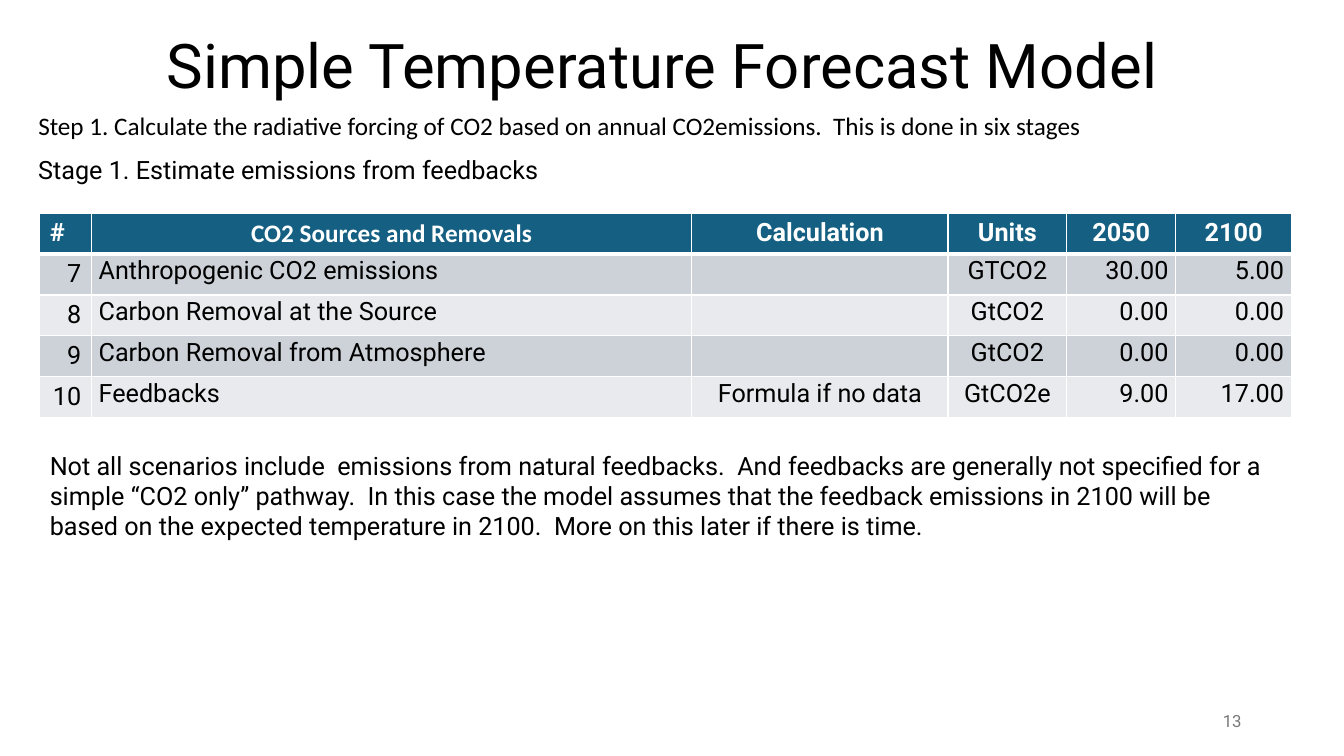
from lxml.etree import SubElement
from pptx import Presentation
from pptx.dml.color import RGBColor
from pptx.enum.text import MSO_ANCHOR, PP_ALIGN
from pptx.oxml import parse_xml
from pptx.oxml.ns import nsdecls
from pptx.util import Emu, Pt

BLACK = RGBColor(0x00, 0x00, 0x00)
WHITE = RGBColor(0xFF, 0xFF, 0xFF)
GREY = RGBColor(0x79, 0x79, 0x79)
TEAL = RGBColor(0x15, 0x60, 0x82)
BANDS = [RGBColor(0xCC, 0xD2, 0xD8), RGBColor(0xE8, 0xEA, 0xED)]
LEFT, MID, RIGHT = PP_ALIGN.LEFT, PP_ALIGN.CENTER, PP_ALIGN.RIGHT

COLUMNS = [49, 572, 244, 113, 104, 110]
ALIGNS = [RIGHT, LEFT, MID, MID, RIGHT, RIGHT]
HEADS = ["#", "CO2 Sources and Removals", "Calculation", "Units", "2050", "2100"]
ROWS = [
    ["7", "Anthropogenic CO2 emissions", "", "GTCO2", "30.00", "5.00"],
    ["8", "Carbon Removal at the Source", "", "GtCO2", "0.00", "0.00"],
    ["9", "Carbon Removal from Atmosphere", "", "GtCO2", "0.00", "0.00"],
    ["10", "Feedbacks", "Formula if no data", "GtCO2e", "9.00", "17.00"],
]
NOTE = (
    "Not all scenarios include  emissions from natural feedbacks.  And feedbacks are "
    "generally not specified for a simple “CO2 only” pathway.  In this case the model "
    "assumes that the feedback emissions in 2100 will be based on the expected "
    "temperature in 2100.  More on this later if there is time."
)


def px(count):
    """Turn whole pixels into EMU."""
    return Emu(count * 9525)


def assign(target, values):
    """Set every named attribute on the target."""
    for name, value in values.items():
        setattr(target, name, value)


class Deck:
    """Hold the text style and the current slide."""

    def __init__(self):
        """Open a wide deck with one title-only slide."""
        self.deck = Presentation()
        assign(self.deck, {"slide_width": px(1280), "slide_height": px(720)})
        self.slide = self.deck.slides.add_slide(self.deck.slide_layouts[5])
        self.style = {"name": "Roboto", "size": Pt(18), "bold": False}

    def text(self, frame, words, color=BLACK, para=None, **font):
        """Put one formatted paragraph into a text frame."""
        line = frame.paragraphs[0]
        assign(line, para or {})
        run = line.add_run()
        run.text = words
        assign(run.font, self.style | font)
        run.font.color.rgb = color

    def title(self, words, box):
        """Place and fill the title placeholder."""
        shape = self.slide.shapes.title
        assign(shape, dict(zip(("left", "top", "width", "height"), map(px, box))))
        shape.text_frame.vertical_anchor = MSO_ANCHOR.MIDDLE
        self.text(shape.text_frame, words, size=Pt(44),
                  para={"alignment": MID, "line_spacing": 0.9})

    def label(self, words, box, anchor=MSO_ANCHOR.TOP, **look):
        """Add a wrapped text box."""
        frame = self.slide.shapes.add_textbox(*map(px, box)).text_frame
        assign(frame, {"word_wrap": True, "vertical_anchor": anchor})
        self.text(frame, words, **look)

    def border(self, cell, base):
        """Draw white lines around a cell, with the given base width."""
        props = cell._tc.get_or_add_tcPr()
        for spot, side in enumerate("LRTB"):
            width = Pt(base if side == "B" else 1)
            line = parse_xml(f'<a:ln{side} {nsdecls("a")} w="{width}"/>')
            fill = SubElement(line, line.tag.replace(f"ln{side}", "solidFill"))
            SubElement(fill, line.tag.replace(f"ln{side}", "srgbClr"), val=str(WHITE))
            props.insert(spot, line)

    def cell(self, cell, words, fill, base=1, **look):
        """Fill, border and letter one table cell."""
        cell.fill.solid()
        cell.fill.fore_color.rgb = fill
        self.border(cell, base)
        if words:
            self.text(cell.text_frame, words, **look)

    def table(self, left, top, tall):
        """Add the table of sources and removals."""
        count = len(ROWS) + 1
        grid = self.slide.shapes.add_table(
            count, len(COLUMNS), px(left), px(top), px(sum(COLUMNS)), px(tall * count)
        ).table
        for column, width in zip(grid.columns, COLUMNS):
            column.width = px(width)
        for col, head in enumerate(HEADS):
            self.cell(grid.cell(0, col), head, TEAL, 3, color=WHITE, bold=True,
                      name="Calibri" if col == 1 else "Roboto",
                      para={"alignment": MID if col else LEFT})
        tight = {"margin_left": px(7), "margin_right": px(7), "margin_top": 0,
                 "margin_bottom": 0, "vertical_anchor": MSO_ANCHOR.MIDDLE}
        for row, texts in enumerate(ROWS):
            for col, words in enumerate(texts):
                cell = grid.cell(row + 1, col)
                para = {"alignment": ALIGNS[col]}
                if col and words:
                    assign(cell, tight)
                    para |= {"line_spacing": Pt(16.5), "space_after": Pt(10)}
                self.cell(cell, words, BANDS[row % 2], para=para)


def main():
    """Build and save the slide."""
    deck = Deck()
    deck.title("Simple Temperature Forecast Model", (79, -4, 1104, 139))
    deck.label("Step 1. Calculate the radiative forcing of CO2 based on annual "
               "CO2emissions.  This is done in six stages", (27, 96, 1223, 88),
               name="Calibri", para={"line_spacing": 1.15, "space_after": Pt(10)})
    deck.table(38, 203, 39)
    deck.label("Stage 1. Estimate emissions from feedbacks", (27, 142, 511, 38))
    deck.label(NOTE, (38, 424, 1192, 97))
    deck.label("13", (904, 667, 288, 38), MSO_ANCHOR.MIDDLE, color=GREY,
               size=Pt(12), para={"alignment": RIGHT})
    deck.deck.save("out.pptx")


if __name__ == "__main__":
    main()
